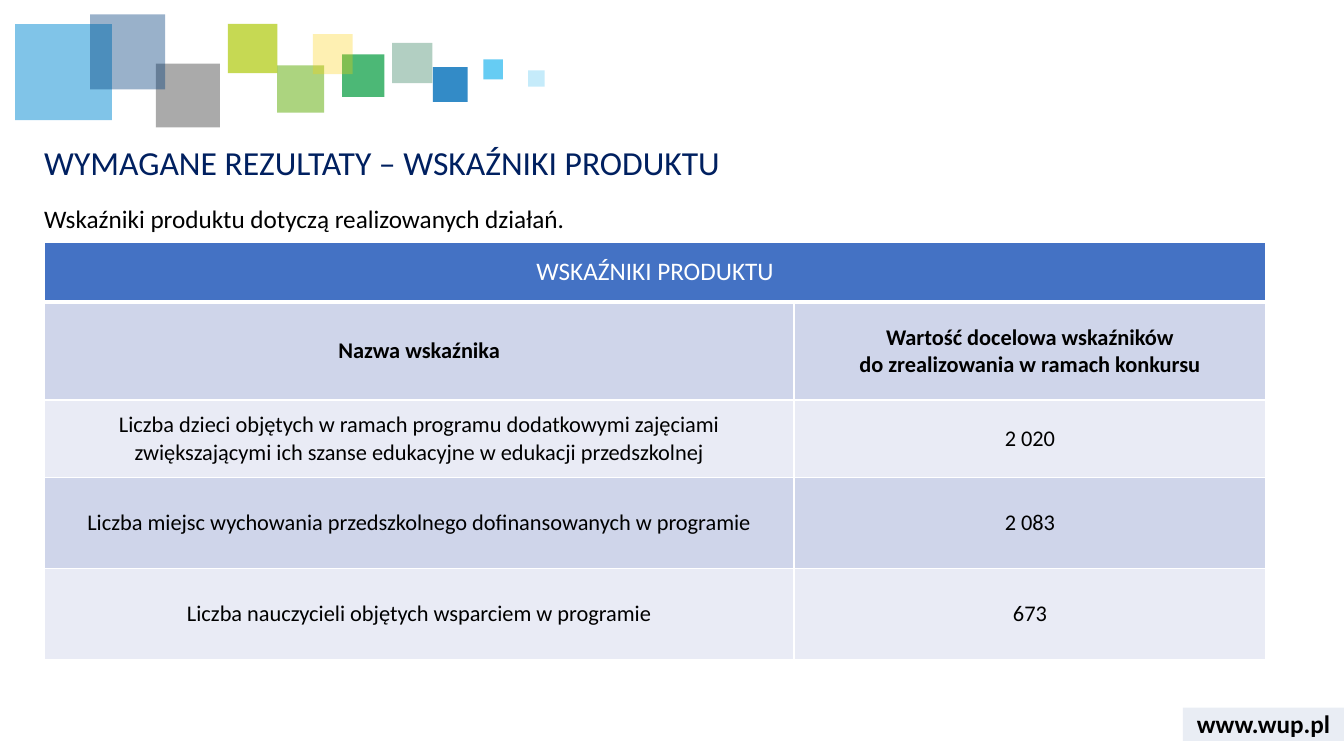
from typing import NamedTuple

from lxml.etree import SubElement
from pptx import Presentation
from pptx.dml.color import RGBColor
from pptx.enum.shapes import MSO_SHAPE as Shape
from pptx.enum.text import MSO_ANCHOR as Anchor, PP_ALIGN as Align
from pptx.oxml.ns import qn
from pptx.util import Pt

FONT = "Calibri"
BLACK, WHITE, NAVY = "000000", "FFFFFF", "002060"
HEADER_FILL = "4472C4"
BAND_FILLS = ("CFD5EA", "E9EBF5")


class Block(NamedTuple):
    left: float
    top: float
    width: float
    height: float
    color: str
    opacity: int


class Label(NamedTuple):
    text: str
    left: float
    top: float
    width: float
    height: float
    size: int
    color: str = BLACK
    bold: bool = False
    align: Align = Align.LEFT
    anchor: Anchor = Anchor.MIDDLE
    spacing: float = 1.0


BLOCKS = [
    Block(280.2, 30.7, 28.7, 28.7, "006138", 30),
    Block(309.3, 48, 24.8, 24.8, "006EB9", 80),
    Block(244.3, 38.9, 30.3, 30.3, "009A3C", 70),
    Block(10.9, 17.2, 69, 68.7, "028BD3", 50),
    Block(197.9, 46.7, 33.7, 33.7, "75B82A", 60),
    Block(111.4, 45.4, 45.7, 45.7, "575757", 50),
    Block(64.4, 10.2, 53.6, 53.6, "003D7C", 40),
    Block(345.3, 42.4, 14, 14.3, "40C0F1", 80),
    Block(162.8, 17.1, 35.3, 35.2, "AFCA0B", 70),
    Block(223.4, 24.4, 28.5, 28.5, "FED000", 30),
    Block(377.3, 50.2, 11.7, 11.7, "40C0F1", 30),
    Block(845, 505.5, 115, 23.8, "2F5597", 10),
]

LABELS = [
    Label("www.wup.pl", 845, 502, 115, 29, 18, bold=True, align=Align.CENTER),
    Label("WYMAGANE REZULTATY – WSKAŹNIKI PRODUKTU",
          24.5, 98, 893.5, 39.6, 24, NAVY, spacing=0.9),
    Label("Wskaźniki produktu dotyczą realizowanych działań.",
          24.5, 144, 893.5, 342.7, 18, anchor=Anchor.TOP, spacing=0.9),
]

TABLE_LEFT, TABLE_TOP = 31.7, 172.8
COLUMN_WIDTHS = (535.5, 337)
ROW_HEIGHTS = (43, 70, 55.5, 65, 65)
TABLE_TITLE = "WSKAŹNIKI PRODUKTU"
ROWS = [
    ("Nazwa wskaźnika",
     "Wartość docelowa wskaźników\vdo zrealizowania w ramach konkursu"),
    ("Liczba dzieci objętych w ramach programu dodatkowymi zajęciami "
     "zwiększającymi ich szanse edukacyjne w edukacji przedszkolnej", "2 020"),
    ("Liczba miejsc wychowania przedszkolnego dofinansowanych w programie", "2 083"),
    ("Liczba nauczycieli objętych wsparciem w programie", "673"),
]


def rgb(color: str) -> RGBColor:
    return RGBColor.from_string(color)


def style_paragraph(p, size: int, color: str, bold: bool, align: Align) -> None:
    p.alignment = align
    p.font.name = FONT
    p.font.size = Pt(size)
    p.font.bold = bold
    p.font.color.rgb = rgb(color)


def add_block(s, block: Block) -> None:
    sp = s.shapes.add_shape(Shape.RECTANGLE, Pt(block.left), Pt(block.top),
                            Pt(block.width), Pt(block.height))
    sp.shadow.inherit = False
    sp.line.fill.background()
    sp.fill.solid()
    sp.fill.fore_color.rgb = rgb(block.color)
    color_element = next(sp.fill._xPr.iter(qn("a:srgbClr")))
    SubElement(color_element, qn("a:alpha"), val=str(block.opacity * 1000))


def add_label(s, label: Label) -> None:
    sp = s.shapes.add_textbox(Pt(label.left), Pt(label.top),
                              Pt(label.width), Pt(label.height))
    tf = sp.text_frame
    tf.word_wrap = True
    tf.vertical_anchor = label.anchor
    p = tf.paragraphs[0]
    p.text = label.text
    p.line_spacing = label.spacing
    style_paragraph(p, label.size, label.color, label.bold, label.align)


def add_borders(cell, bottom: float) -> None:
    """Draw white borders; call before the fill, which must follow them in XML."""
    tc_pr = cell._tc.get_or_add_tcPr()
    for side, width in (("L", 1), ("R", 1), ("T", 1), ("B", bottom)):
        ln = SubElement(tc_pr, qn(f"a:ln{side}"), w=str(Pt(width)))
        SubElement(SubElement(ln, qn("a:solidFill")), qn("a:srgbClr"), val=WHITE)


def style_cell(cell, text: str, fill: str, size: int = 16, color: str = BLACK,
               bold: bool = False, bottom: float = 1) -> None:
    add_borders(cell, bottom)
    cell.fill.solid()
    cell.fill.fore_color.rgb = rgb(fill)
    cell.vertical_anchor = Anchor.MIDDLE
    p = cell.text_frame.paragraphs[0]
    p.text = text
    style_paragraph(p, size, color, bold, Align.CENTER)


def add_indicator_table(s) -> None:
    table = s.shapes.add_table(
        len(ROW_HEIGHTS), len(COLUMN_WIDTHS), Pt(TABLE_LEFT), Pt(TABLE_TOP),
        Pt(sum(COLUMN_WIDTHS)), Pt(sum(ROW_HEIGHTS))).table
    for column, width in zip(table.columns, COLUMN_WIDTHS):
        column.width = Pt(width)
    for row, height in zip(table.rows, ROW_HEIGHTS):
        row.height = Pt(height)
    title = table.cell(0, 0)
    title.merge(table.cell(0, 1))
    style_cell(title, TABLE_TITLE, HEADER_FILL, 18, WHITE, bottom=3)
    for i, texts in enumerate(ROWS):
        for j, text in enumerate(texts):
            style_cell(table.cell(i + 1, j), text, BAND_FILLS[i % 2], bold=i == 0)


def main() -> None:
    prs = Presentation()
    prs.slide_width, prs.slide_height = Pt(960), Pt(540)
    s = prs.slides.add_slide(prs.slide_layouts[6])
    for block in BLOCKS:
        add_block(s, block)
    for label in LABELS:
        add_label(s, label)
    add_indicator_table(s)
    prs.save("out.pptx")


if __name__ == "__main__":
    main()
